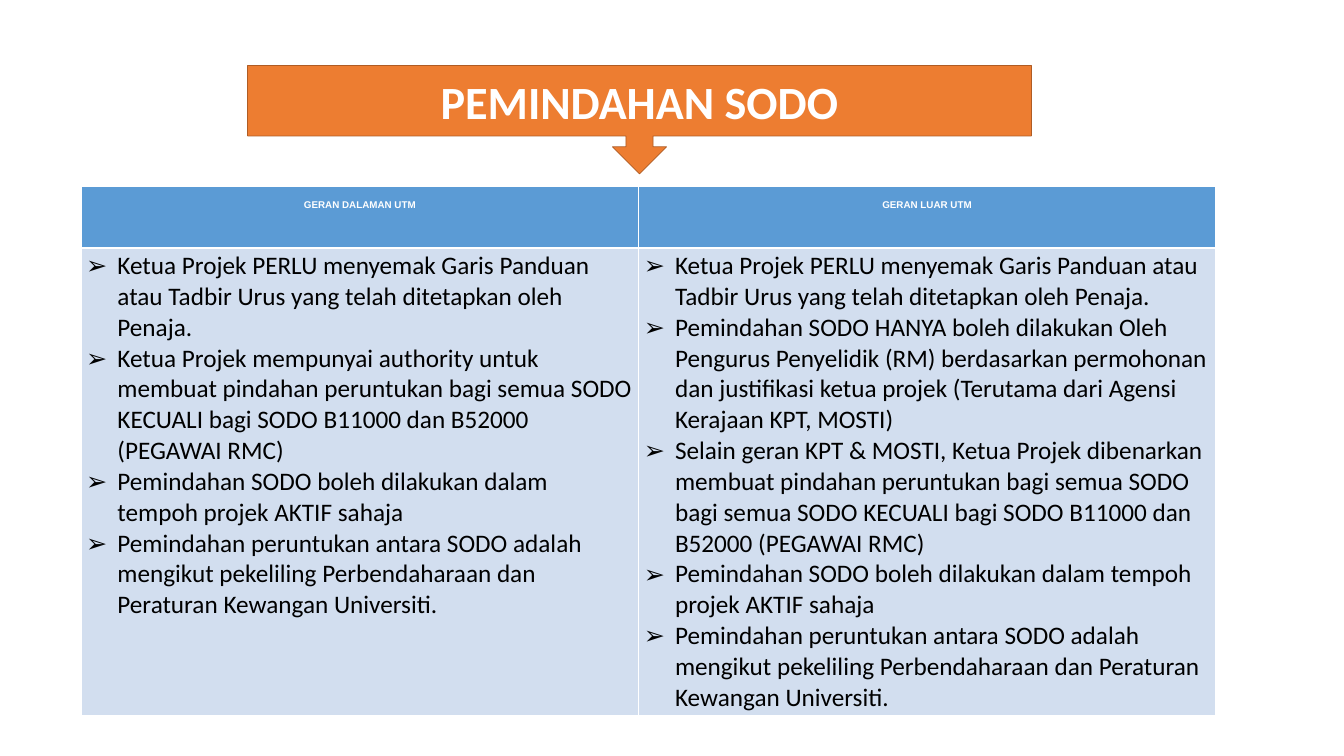
import pptx
import pptx.dml.color
import pptx.enum.shapes
import pptx.enum.text
import pptx.oxml
import pptx.oxml.ns
import pptx.util
from pptx.util import Inches

ALIGN = pptx.enum.text.PP_ALIGN
READ_GUIDELINES = (
    "Ketua Projek PERLU menyemak Garis Panduan atau Tadbir Urus "
    "yang telah ditetapkan oleh Penaja."
)
ACTIVE_PERIOD = "Pemindahan SODO boleh dilakukan dalam tempoh projek AKTIF sahaja"
TREASURY_RULES = (
    "Pemindahan peruntukan antara SODO adalah mengikut pekeliling "
    "Perbendaharaan dan Peraturan Kewangan Universiti."
)
GRANTS = {
    "GERAN DALAMAN UTM": [
        READ_GUIDELINES,
        "Ketua Projek mempunyai authority untuk membuat pindahan peruntukan bagi "
        "semua SODO KECUALI bagi SODO B11000 dan B52000 (PEGAWAI RMC)",
        ACTIVE_PERIOD,
        TREASURY_RULES,
    ],
    "GERAN LUAR UTM": [
        READ_GUIDELINES,
        "Pemindahan SODO HANYA boleh dilakukan Oleh Pengurus Penyelidik (RM) "
        "berdasarkan permohonan dan justifikasi ketua projek "
        "(Terutama dari Agensi Kerajaan KPT, MOSTI)",
        "Selain geran KPT & MOSTI, Ketua Projek dibenarkan membuat pindahan "
        "peruntukan bagi semua SODO bagi semua SODO KECUALI bagi SODO B11000 "
        "dan B52000 (PEGAWAI RMC)",
        ACTIVE_PERIOD,
        TREASURY_RULES,
    ],
}


def color(hex_string):
    """Return the colour for a hex string."""
    return pptx.dml.color.RGBColor.from_string(hex_string)


def add_bullet(paragraph, character, indent):
    """Give a paragraph a bullet with a hanging indent."""
    properties = paragraph._p.get_or_add_pPr()
    properties.set("marL", str(indent))
    properties.set("indent", str(-indent))
    namespace = pptx.oxml.ns.nsdecls("a")
    properties.append(pptx.oxml.parse_xml(f'<a:buFont {namespace} typeface="Arial"/>'))
    properties.append(pptx.oxml.parse_xml(f'<a:buChar {namespace} char="{character}"/>'))


def write_text(text_frame, lines, font="Calibri", size=36, fill="000000",
               bold=False, align=ALIGN.LEFT, bullet=None):
    """Write one formatted paragraph for each line."""
    text_frame.text = "\n".join(lines)
    for paragraph in text_frame.paragraphs:
        if bullet:
            add_bullet(paragraph, bullet, Inches(0.62))
        paragraph.alignment = align
        for run in paragraph.runs:
            run.font.name = font
            run.font.size = pptx.util.Pt(size)
            run.font.bold = bold
            run.font.color.rgb = color(fill)


def format_cell(cell, fill, bottom_width):
    """Give a cell white borders and a solid fill."""
    properties = cell._tc.get_or_add_tcPr()
    for side, width in (("L", 1), ("R", 1), ("T", 1), ("B", bottom_width)):
        properties.append(pptx.oxml.parse_xml(
            f'<a:ln{side} {pptx.oxml.ns.nsdecls("a")} w="{pptx.util.Pt(width)}">'
            '<a:solidFill><a:srgbClr val="FFFFFF"/></a:solidFill>'
            f'</a:ln{side}>'))
    cell.fill.solid()
    cell.fill.fore_color.rgb = color(fill)


def add_title_callout(slide, title_text, left, top, width, height):
    """Draw the arrow callout with the slide title on its rectangular part."""
    callout = slide.shapes.add_shape(
        pptx.enum.shapes.MSO_SHAPE.DOWN_ARROW_CALLOUT, left, top, width, height)
    callout.shadow.inherit = False
    callout.fill.solid()
    callout.fill.fore_color.rgb = color("ED7D31")
    callout.line.color.rgb = color("AF5C24")
    callout.line.width = pptx.util.Pt(1)

    title = slide.shapes.title
    title.element.getparent().append(title.element)
    title.left, title.top, title.width = left, top, width
    title.height = int(height * 0.65)
    title.text_frame.auto_size = pptx.enum.text.MSO_AUTO_SIZE.NONE
    title.text_frame.vertical_anchor = pptx.enum.text.MSO_ANCHOR.MIDDLE
    write_text(title.text_frame, [title_text], size=66, fill="FFFFFF",
               bold=True, align=ALIGN.CENTER)


def add_grant_table(slide, grants, left, top, column_widths, row_heights):
    """Add the table with one column of rules for each kind of grant."""
    table = slide.shapes.add_table(
        len(row_heights), len(column_widths), left, top,
        sum(column_widths), sum(row_heights)).table
    for row, height in zip(table.rows, row_heights):
        row.height = height
    for index, (heading, rules) in enumerate(grants.items()):
        table.columns[index].width = column_widths[index]
        header, body = table.cell(0, index), table.cell(1, index)
        format_cell(header, "5B9BD5", 3)
        format_cell(body, "D2DEEF", 1)
        header.margin_top = Inches(0.27)
        write_text(header.text_frame, [heading], font="Arial", size=14,
                   fill="FFFFFF", bold=True, align=ALIGN.CENTER)
        write_text(body.text_frame, rules, bullet="➢")


def main():
    """Build and save the presentation."""
    presentation = pptx.Presentation()
    presentation.slide_width = Inches(26.66)
    presentation.slide_height = Inches(15)
    slide = presentation.slides.add_slide(presentation.slide_layouts[5])
    add_title_callout(slide, "PEMINDAHAN SODO",
                      Inches(4.91), Inches(1.3), Inches(15.55), Inches(2.15))
    add_grant_table(slide, GRANTS, Inches(1.61), Inches(3.69),
                    [Inches(11.06), Inches(11.44)], [Inches(1.23), Inches(9.19)])
    presentation.save("out.pptx")


if __name__ == "__main__":
    main()
